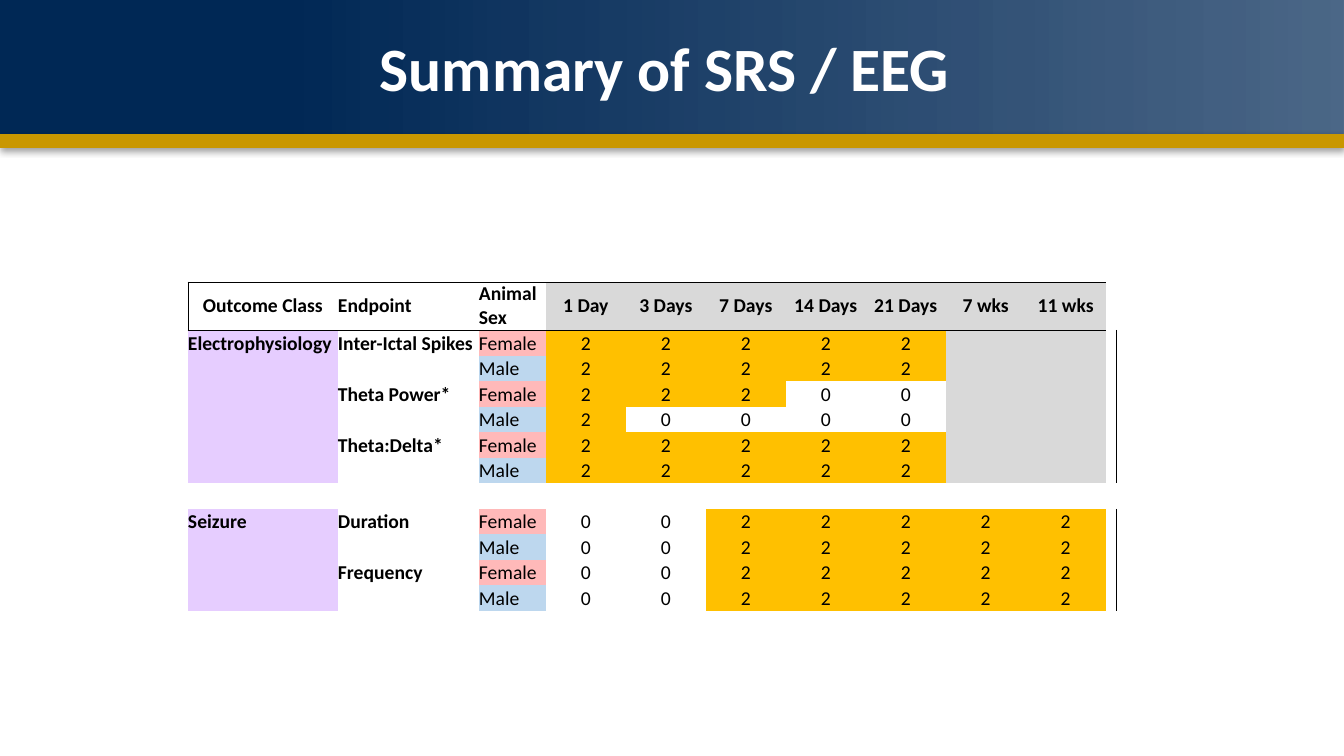
from lxml.etree import SubElement
from pptx import Presentation
from pptx.dml.color import RGBColor
from pptx.enum.shapes import MSO_CONNECTOR, MSO_SHAPE
from pptx.enum.text import MSO_ANCHOR as Anchor, PP_ALIGN as Align
from pptx.oxml.ns import qn
from pptx.util import Pt

WIDTH, HEIGHT = 1344, 756
EMU_PER_PX = 12192000 / WIDTH

FONT = "Calibri"
NO_GRID_STYLE = "{2D5ABB26-0587-4C30-8999-92F81FD0307C}"

NAVY = RGBColor(0x00, 0x28, 0x55)
GOLD = RGBColor(0xC9, 0x97, 0x00)
WHITE = RGBColor(0xFF, 0xFF, 0xFF)
BLACK = RGBColor(0x00, 0x00, 0x00)
GREY = RGBColor(0xD9, 0xD9, 0xD9)
LILAC = RGBColor(0xE6, 0xCD, 0xFF)
PINK = RGBColor(0xFF, 0xB9, 0xB9)
BLUE = RGBColor(0xBD, 0xD7, 0xEE)
ORANGE = RGBColor(0xFF, 0xC0, 0x00)

SEX_FILLS = {"Female": PINK, "Male": BLUE}
SCORE_FILLS = {"2": ORANGE, "0": WHITE, "": GREY}

LABELS = ["Outcome Class", "Endpoint", "Animal Sex"]
TIMES = ["1 Day", "3 Days", "7 Days", "14 Days", "21 Days", "7 wks", "11 wks"]
COLUMN_WIDTHS = [150, 141, 67] + [80] * len(TIMES) + [11]
HEADER_HEIGHT = 48

# Outcome class, then for each endpoint the female and male scores by time.
OUTCOMES = [
    ("Electrophysiology", [
        ("Inter-Ictal Spikes", "22222", "22222"),
        ("Theta Power*", "22200", "20000"),
        ("Theta:Delta*", "22222", "22222"),
    ]),
    ("Seizure", [
        ("Duration", "0022222", "0022222"),
        ("Frequency", "0022222", "0022222"),
    ]),
]


def px(length):
    return round(length * EMU_PER_PX)


def add_run(paragraph, text, size, color, bold=False):
    run = paragraph.add_run()
    run.text = text
    run.font.name = FONT
    run.font.size = Pt(size)
    run.font.bold = bold
    run.font.color.rgb = color


def add_band(slide):
    band = slide.shapes.add_shape(MSO_SHAPE.RECTANGLE, 0, 0, px(WIDTH), px(148))
    band.shadow.inherit = False
    band.line.fill.background()
    band.fill.gradient()
    band.fill.gradient_angle = 0
    for stop, position in zip(band.fill.gradient_stops, (0.2, 1)):
        stop.position = position
        stop.color.rgb = NAVY
    last_color = band.element.findall(".//" + qn("a:srgbClr"))[-1]
    SubElement(last_color, qn("a:alpha"), val="70000")


def add_gold_rule(slide):
    rule = slide.shapes.add_connector(
        MSO_CONNECTOR.STRAIGHT, 0, px(141), px(WIDTH), px(141))
    rule.line.color.rgb = GOLD
    rule.line.width = Pt(10)
    effects = SubElement(rule.element.spPr, qn("a:effectLst"))
    shadow = SubElement(effects, qn("a:outerShdw"), blurRad=str(Pt(5)),
                        dist=str(Pt(1.6)), dir="5400000", rotWithShape="0")
    color = SubElement(shadow, qn("a:srgbClr"), val=str(BLACK))
    SubElement(color, qn("a:alpha"), val="38000")


def place_title(slide, text):
    """Fill the title placeholder and bring it in front of the band."""
    title = slide.shapes.title
    title.left, title.top = px(67), px(8)
    title.width, title.height = px(1210), px(118)
    title.element.getparent().append(title.element)
    frame = title.text_frame
    frame.vertical_anchor = Anchor.MIDDLE
    paragraph = frame.paragraphs[0]
    paragraph.alignment = Align.CENTER
    add_run(paragraph, text, 44, WHITE, bold=True)


def add_borders(cell, sides):
    """Draw thin black borders; sides are letters in the order L, R, T, B."""
    properties = cell._tc.get_or_add_tcPr()
    for side in sides:
        line = SubElement(properties, qn("a:ln" + side), w=str(Pt(0.5)))
        fill = SubElement(line, qn("a:solidFill"))
        SubElement(fill, qn("a:srgbClr"), val=str(BLACK))


def format_cell(cell, text="", fill=None, borders="", bold=False,
                align=Align.LEFT, anchor=Anchor.BOTTOM):
    cell.margin_left = cell.margin_right = 0
    cell.margin_top = cell.margin_bottom = 0
    cell.vertical_anchor = anchor
    add_borders(cell, borders)
    if fill is None:
        cell.fill.background()
    else:
        cell.fill.solid()
        cell.fill.fore_color.rgb = fill
    paragraph = cell.text_frame.paragraphs[0]
    paragraph.alignment = align
    if text:
        add_run(paragraph, text, 14, BLACK, bold)
    else:
        SubElement(paragraph._p, qn("a:endParaRPr"), sz="1400")


def fill_header(cells):
    for index, (cell, text) in enumerate(zip(cells, LABELS + TIMES)):
        is_time = index >= len(LABELS)
        format_cell(cell, text, GREY if is_time else None,
                    "LTB" if index == 0 else "TB", bold=True,
                    align=Align.CENTER if is_time or index == 0 else Align.LEFT,
                    anchor=Anchor.MIDDLE)
    format_cell(cells[-1])


def fill_scores(cells, outcome, endpoint, sex, scores):
    format_cell(cells[0], outcome, LILAC, bold=True)
    format_cell(cells[1], endpoint, bold=True)
    format_cell(cells[2], sex, SEX_FILLS[sex])
    padded = list(scores) + [""] * (len(TIMES) - len(scores))
    for cell, score in zip(cells[3:], padded):
        format_cell(cell, score, SCORE_FILLS[score], align=Align.CENTER)
    format_cell(cells[-1], borders="R")


def score_rows():
    """List the rows below the header, with None for the gap between classes."""
    rows = []
    for outcome, endpoints in OUTCOMES:
        if rows:
            rows.append(None)
        for number, (endpoint, female, male) in enumerate(endpoints):
            rows.append((outcome if number == 0 else "", endpoint, "Female", female))
            rows.append(("", "", "Male", male))
    return rows


def add_summary_table(slide):
    rows = score_rows()
    heights = [HEADER_HEIGHT] + [26 - index % 2 for index in range(len(rows))]
    frame = slide.shapes.add_table(
        len(heights), len(COLUMN_WIDTHS), px(188), px(282),
        px(sum(COLUMN_WIDTHS)), px(sum(heights)))
    frame.element.find(".//" + qn("a:tableStyleId")).text = NO_GRID_STYLE
    table = frame.table
    table.first_row = table.horz_banding = False
    for column, width in zip(table.columns, COLUMN_WIDTHS):
        column.width = px(width)
    for row, height in zip(table.rows, heights):
        row.height = px(height)

    header, *body = [list(row.cells) for row in table.rows]
    fill_header(header)
    for cells, row in zip(body, rows):
        if row:
            fill_scores(cells, *row)
        else:
            for cell in cells:
                format_cell(cell)


def main():
    presentation = Presentation()
    presentation.slide_width = px(WIDTH)
    presentation.slide_height = px(HEIGHT)
    slide = presentation.slides.add_slide(presentation.slide_layouts[5])
    add_band(slide)
    add_gold_rule(slide)
    place_title(slide, "Summary of SRS / EEG ")
    add_summary_table(slide)
    presentation.save("out.pptx")


if __name__ == "__main__":
    main()
